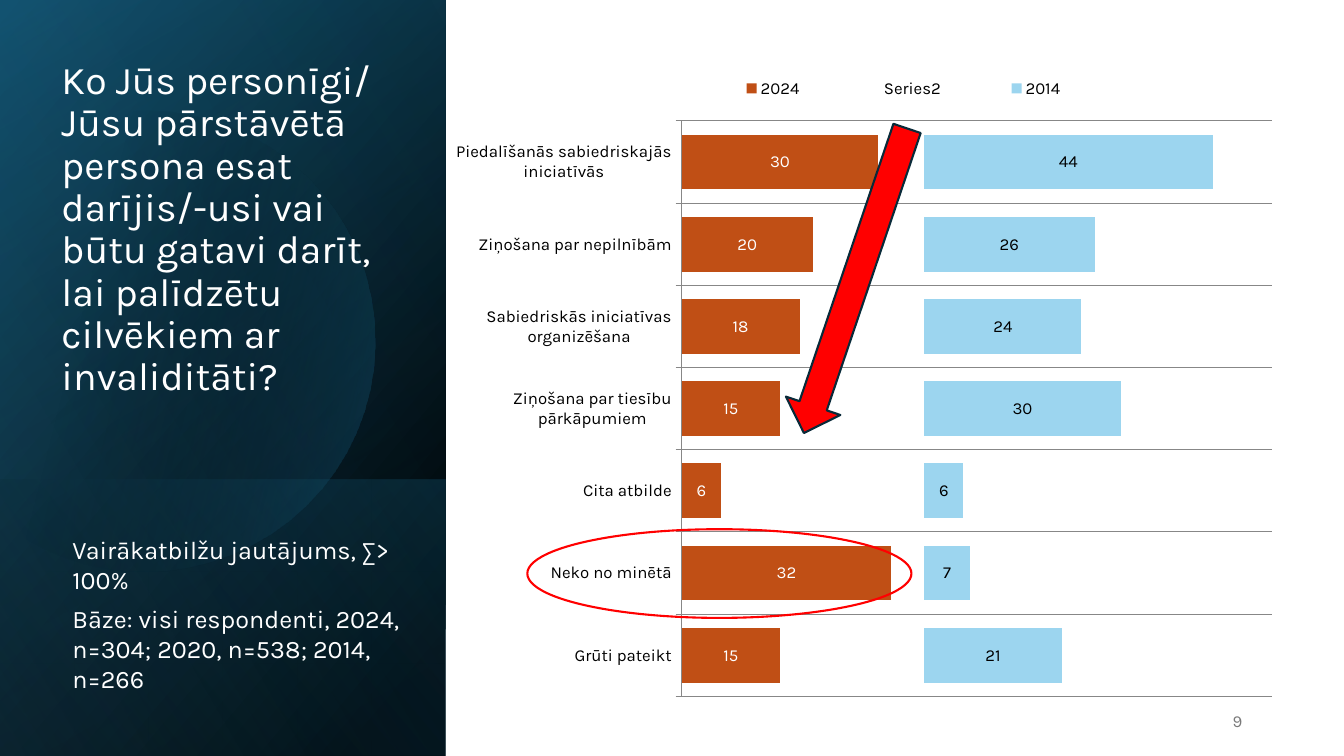
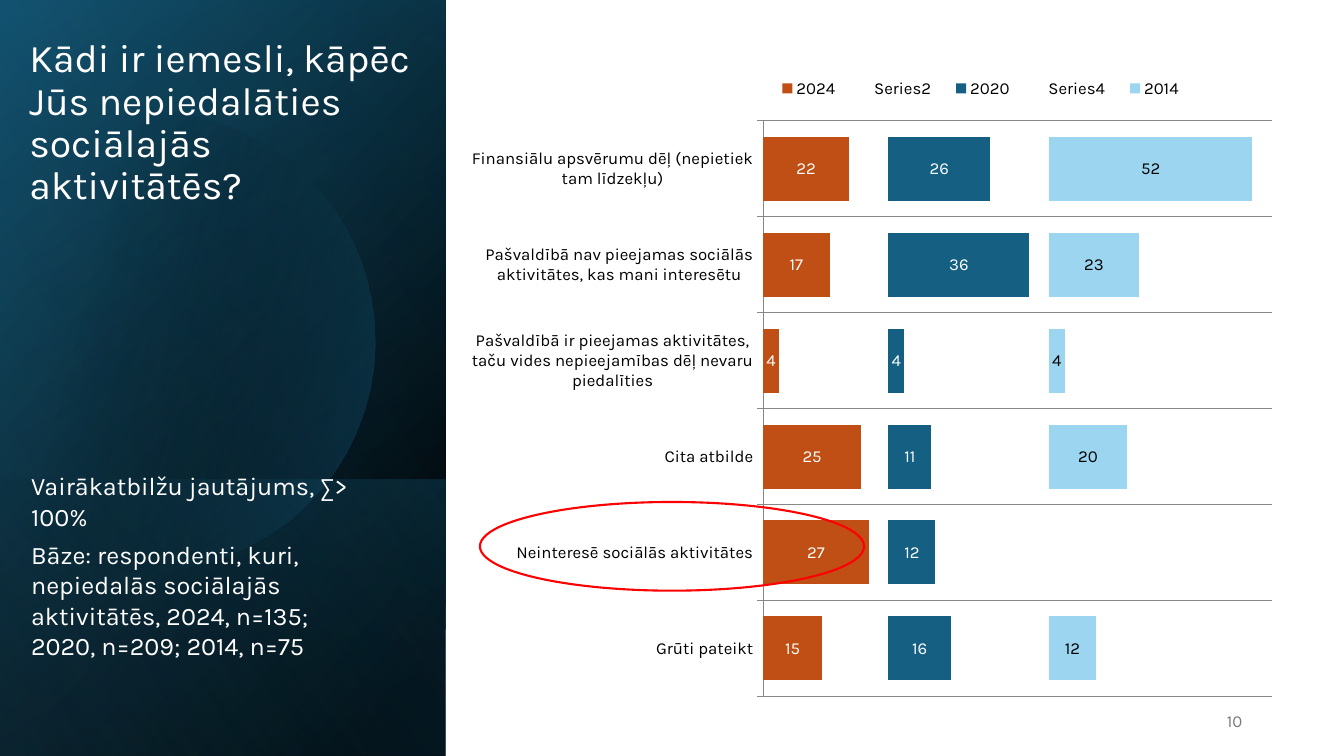
from lxml.etree import SubElement
from pptx import Presentation
from pptx.chart.data import CategoryChartData
from pptx.dml.color import RGBColor
from pptx.enum.chart import XL_CHART_TYPE, XL_LABEL_POSITION, XL_LEGEND_POSITION, XL_TICK_LABEL_POSITION, XL_TICK_MARK
from pptx.enum.shapes import MSO_SHAPE
from pptx.enum.text import MSO_ANCHOR, MSO_AUTO_SIZE, PP_ALIGN
from pptx.oxml.ns import qn
from pptx.util import Inches, Pt

FONT = "Karla"
BLACK = RGBColor(0x00, 0x00, 0x00)
WHITE = RGBColor(0xFF, 0xFF, 0xFF)
NAVY = RGBColor(0x10, 0x48, 0x62)
TEAL = RGBColor(0x15, 0x60, 0x82)
SKY = RGBColor(0x46, 0xB1, 0xE1)
LIGHT_BLUE = RGBColor(0x9C, 0xD5, 0xEF)
RUST = RGBColor(0xC0, 0x4F, 0x15)
RED = RGBColor(0xFF, 0x00, 0x00)
OUTLINE = RGBColor(0x09, 0x2A, 0x39)
GREY = RGBColor(0x79, 0x79, 0x79)
GRID = RGBColor(0x87, 0x87, 0x87)

PANEL_W = 4.42
SLIDE_H = 7.5
# top, height, gradient angle, stops (position %, colour, opacity %)
PANEL_LAYERS = [
    (0, SLIDE_H, 50, [(8, BLACK, 100), (100, NAVY, 100)]),
    (0, SLIDE_H, 30, [(0, BLACK, 0), (99, TEAL, 46)]),
    (4.76, 2.74, 130, [(2, TEAL, 29), (100, BLACK, 30)]),
]
PANEL_GLOW = (0, SLIDE_H, 120, [(0, BLACK, 0), (99, SKY, 11)])
DISC_START = (1.49, 1.1)
# Each curve holds two control points and an end point
DISC_CURVES = [
    ((2.46, 1.12), (3.35, 1.77), (3.63, 2.75)),
    ((3.98, 3.97), (3.28, 5.23), (2.07, 5.58)),
    ((1.31, 5.8), (0.53, 5.61), (-0.03, 5.14)),
    ((-0.15, 5.03), (-0.15, 1.75), (0, 1.61)),
    ((0.23, 1.42), (0.5, 1.28), (0.8, 1.19)),
    ((1.03, 1.13), (1.26, 1.1), (1.49, 1.1)),
]
DISC_STRAIGHT = 3
CURVE_STEPS = 16
COLUMN_GAP = 5


def inches(*values):
    return [Inches(v) for v in values]


def fill_gradient(shape, angle, stops):
    """Fill with a two-stop gradient; the angle runs clockwise."""
    shape.shadow.inherit = False
    shape.line.fill.background()
    shape.fill.gradient()
    shape.fill.gradient_angle = 360 - angle
    for stop, (position, color, _) in zip(shape.fill.gradient_stops, stops):
        stop.position = position / 100
        stop.color.rgb = color
    colors = shape.element.spPr.iter(qn("a:srgbClr"))
    for color, (_, _, opacity) in zip(list(colors), stops):
        if opacity < 100:
            SubElement(color, qn("a:alpha")).set("val", str(opacity * 1000))


def add_layer(s, top, height, angle, stops):
    """Add a panel-wide rectangle, turned a quarter and mirrored."""
    left = (PANEL_W - height) / 2
    turned_top = top + (height - PANEL_W) / 2
    layer = s.shapes.add_shape(MSO_SHAPE.RECTANGLE, *inches(left, turned_top, height, PANEL_W))
    layer.rotation = 90
    layer.element.spPr.find(qn("a:xfrm")).set("flipH", "1")
    fill_gradient(layer, angle, stops)


def curve_points(start, control1, control2, end):
    points = []
    for step in range(1, CURVE_STEPS + 1):
        t = step / CURVE_STEPS
        u = 1 - t
        points.append(tuple(
            u**3 * a + 3 * u * u * t * b + 3 * u * t * t * c + t**3 * d
            for a, b, c, d in zip(start, control1, control2, end)))
    return points


def add_disc(s):
    points = [DISC_START]
    for i, curve in enumerate(DISC_CURVES):
        points += curve if i == DISC_STRAIGHT else curve_points(points[-1], *curve)
    builder = s.shapes.build_freeform(*inches(*DISC_START), scale=1.0)
    builder.add_line_segments([inches(*point) for point in points[1:]], close=True)
    fill_gradient(builder.convert_to_shape(), 14, [(29, BLACK, 0), (100, TEAL, 43)])


def add_panel(s):
    for layer in PANEL_LAYERS:
        add_layer(s, *layer)
    add_disc(s)
    add_layer(s, *PANEL_GLOW)


def add_run(p, text, size, color):
    r = p.add_run()
    r.text = text
    r.font.name = FONT
    r.font.size = Pt(size)
    r.font.color.rgb = color


def set_title(s, text, box, margin_bottom):
    title = s.shapes.title
    title.element.getparent().append(title.element)  # bring above the panel
    title.left, title.top, title.width, title.height = inches(*box)
    tf = title.text_frame
    tf.word_wrap = True
    tf.auto_size = MSO_AUTO_SIZE.NONE
    tf.vertical_anchor = MSO_ANCHOR.MIDDLE
    tf.margin_bottom = Inches(margin_bottom)
    p = tf.paragraphs[0]
    p.alignment = PP_ALIGN.LEFT
    p.line_spacing = 0.9
    p.space_before = Pt(0)
    add_run(p, text, 28, WHITE)


def add_text(s, box, lines, size, color, align=PP_ALIGN.LEFT, anchor=MSO_ANCHOR.TOP, space_after=0):
    tf = s.shapes.add_textbox(*inches(*box)).text_frame
    tf.word_wrap = True
    tf.vertical_anchor = anchor
    for i, line in enumerate(lines):
        p = tf.add_paragraph() if i else tf.paragraphs[0]
        p.alignment = align
        p.space_after = Pt(space_after)
        add_run(p, line, size, color)


def add_note(s, box, lines):
    add_text(s, box, lines, 18, WHITE, space_after=6)


def add_page_number(s, number):
    add_text(s, (9.42, 6.95, 3, 0.4), [str(number)], 12, GREY, PP_ALIGN.RIGHT, MSO_ANCHOR.MIDDLE)


def set_layout(parent, index, x, y, w, h, inner=False):
    """Place a chart part by fractions of the chart area."""
    for old in parent.findall(qn("c:layout")):
        parent.remove(old)
    layout = SubElement(parent, qn("c:layout"))
    parent.insert(index, layout)
    manual = SubElement(layout, qn("c:manualLayout"))
    settings = [("layoutTarget", "inner")] if inner else []
    settings += [("xMode", "edge"), ("yMode", "edge"), ("x", x), ("y", y), ("w", w), ("h", h)]
    for tag, value in settings:
        SubElement(manual, qn(f"c:{tag}")).set("val", str(value))


def spaced_series(series):
    """Put a clear spacer between series so that each starts on its own line."""
    result = []
    for i, (name, values, fill, label) in enumerate(series):
        result.append((name, values, fill, label))
        if i < len(series) - 1:
            width = max(values) + COLUMN_GAP
            spacer = [width - v for v in values]
            result.append((f"Series{len(result) + 1}", spacer, None, None))
    return result


def style_series(ser, fill, label):
    ser.invert_if_negative = False
    if fill is None:
        ser.format.fill.background()
        return
    ser.format.fill.solid()
    ser.format.fill.fore_color.rgb = fill
    labels = ser.data_labels
    labels.show_value = True
    labels.position = XL_LABEL_POSITION.CENTER
    labels.number_format = "0"
    labels.number_format_is_linked = False
    labels.font.name = FONT
    labels.font.size = Pt(12)
    labels.font.color.rgb = label


def style_axes(chart, maximum):
    cat = chart.category_axis
    cat.reverse_order = True
    cat.has_major_gridlines = True
    cat.major_tick_mark = XL_TICK_MARK.OUTSIDE
    cat.tick_label_position = XL_TICK_LABEL_POSITION.LOW
    cat.tick_labels.font.size = Pt(12)
    for line in (cat.format.line, cat.major_gridlines.format.line):
        line.color.rgb = GRID
        line.width = Pt(0.75)
    val = chart.value_axis
    val.visible = False
    val.has_major_gridlines = False
    val.minimum_scale = 0
    val.maximum_scale = maximum
    val.major_unit = 50


def add_bar_chart(s, left, width, categories, series, maximum, plot_x, legend_w):
    columns = spaced_series(series)
    data = CategoryChartData(number_format="0")
    data.categories = categories
    for name, values, _, _ in columns:
        data.add_series(name, values)
    chart = s.shapes.add_chart(
        XL_CHART_TYPE.BAR_STACKED, *inches(left, 0.52, width, 6.48), data).chart
    chart.has_title = False
    chart.font.name = FONT
    chart.font.size = Pt(10)
    chart.font.color.rgb = BLACK
    plot = chart.plots[0]
    plot.gap_width = 50
    plot.overlap = 100
    plot.vary_by_categories = False
    for ser, (_, _, fill, label) in zip(plot.series, columns):
        style_series(ser, fill, label)
    style_axes(chart, maximum)
    chart.has_legend = True
    legend = chart.legend
    legend.position = XL_LEGEND_POSITION.TOP
    legend.include_in_layout = False
    legend.font.size = Pt(12)
    set_layout(legend.element if hasattr(legend, "element") else chart.element.find(".//" + qn("c:legend")),
               1, plot_x, 0.03, legend_w, 0.05)
    set_layout(chart.element.find(".//" + qn("c:plotArea")), 0,
               plot_x, 0.105, round(0.975 - plot_x, 3), 0.881, inner=True)


def add_highlight(s, left, top):
    ellipse = s.shapes.add_shape(MSO_SHAPE.OVAL, *inches(left, top, 3.81, 0.88))
    ellipse.shadow.inherit = False
    ellipse.fill.background()
    ellipse.line.color.rgb = RED
    ellipse.line.width = Pt(1.5)


def add_trend_arrow(s):
    arrow = s.shapes.add_shape(MSO_SHAPE.DOWN_ARROW, *inches(8.2, 1.19, 0.57, 3.19))
    arrow.rotation = 18.7
    arrow.shadow.inherit = False
    arrow.fill.solid()
    arrow.fill.fore_color.rgb = RED
    arrow.line.color.rgb = OUTLINE
    arrow.line.width = Pt(1.5)


def new_slide(prs):
    s = prs.slides.add_slide(prs.slide_layouts[5])
    add_panel(s)
    return s


def build_help_slide(prs):
    s = new_slide(prs)
    set_title(s, "Ko Jūs personīgi/ Jūsu pārstāvētā persona esat darījis/-usi vai būtu gatavi darīt, "
              "lai palīdzētu cilvēkiem ar invaliditāti?", (0.51, 0.31, 3.31, 4.94), 1.05)
    categories = ["Piedalīšanās sabiedriskajās iniciatīvās", "Ziņošana par nepilnībām",
                  "Sabiedriskās iniciatīvas organizēšana", "Ziņošana par tiesību pārkāpumiem",
                  "Cita atbilde", "Neko no minētā", "Grūti pateikt"]
    series = [("2024", [30, 20, 18, 15, 6, 32, 15], RUST, WHITE),
              ("2014", [44, 26, 24, 30, 6, 7, 21], LIGHT_BLUE, BLACK)]
    add_bar_chart(s, 4.52, 8.3, categories, series, 90, 0.27, 0.53)
    add_trend_arrow(s)
    add_highlight(s, 5.23, 5.25)
    add_note(s, (0.62, 5.25, 3.55, 2.09), [
        "Vairākatbilžu jautājums, ∑> 100%",
        "Bāze: visi respondenti, 2024, n=304; 2020, n=538; 2014, n=266"])
    add_page_number(s, 9)


def build_reasons_slide(prs):
    s = new_slide(prs)
    set_title(s, "Kādi ir iemesli, kāpēc Jūs nepiedalāties sociālajās aktivitātēs?",
              (0.19, 0, 4.09, 3.95), 1.55)
    categories = ["Finansiālu apsvērumu dēļ (nepietiek tam līdzekļu)",
                  "Pašvaldībā nav pieejamas sociālās aktivitātes, kas mani interesētu",
                  "Pašvaldībā ir pieejamas aktivitātes, taču vides nepieejamības dēļ nevaru piedalīties",
                  "Cita atbilde", "Neinteresē sociālās aktivitātes", "Grūti pateikt"]
    series = [("2024", [22, 17, 4, 25, 27, 15], RUST, WHITE),
              ("2020", [26, 36, 4, 11, 12, 16], TEAL, WHITE),
              ("2014", [52, 23, 4, 20, None, 12], LIGHT_BLUE, BLACK)]
    add_bar_chart(s, 4.68, 8.14, categories, series, 130, 0.355, 0.53)
    add_highlight(s, 4.76, 4.98)
    add_note(s, (0.21, 4.62, 3.55, 2.39), [
        "Vairākatbilžu jautājums, ∑> 100%",
        "Bāze: respondenti, kuri, nepiedalās sociālajās aktivitātēs, 2024, n=135; 2020, n=209; 2014, n=75"])
    add_page_number(s, 10)


def main():
    prs = Presentation()
    prs.slide_width, prs.slide_height = inches(13.33, SLIDE_H)
    build_help_slide(prs)
    build_reasons_slide(prs)
    prs.save("out.pptx")


if __name__ == "__main__":
    main()
